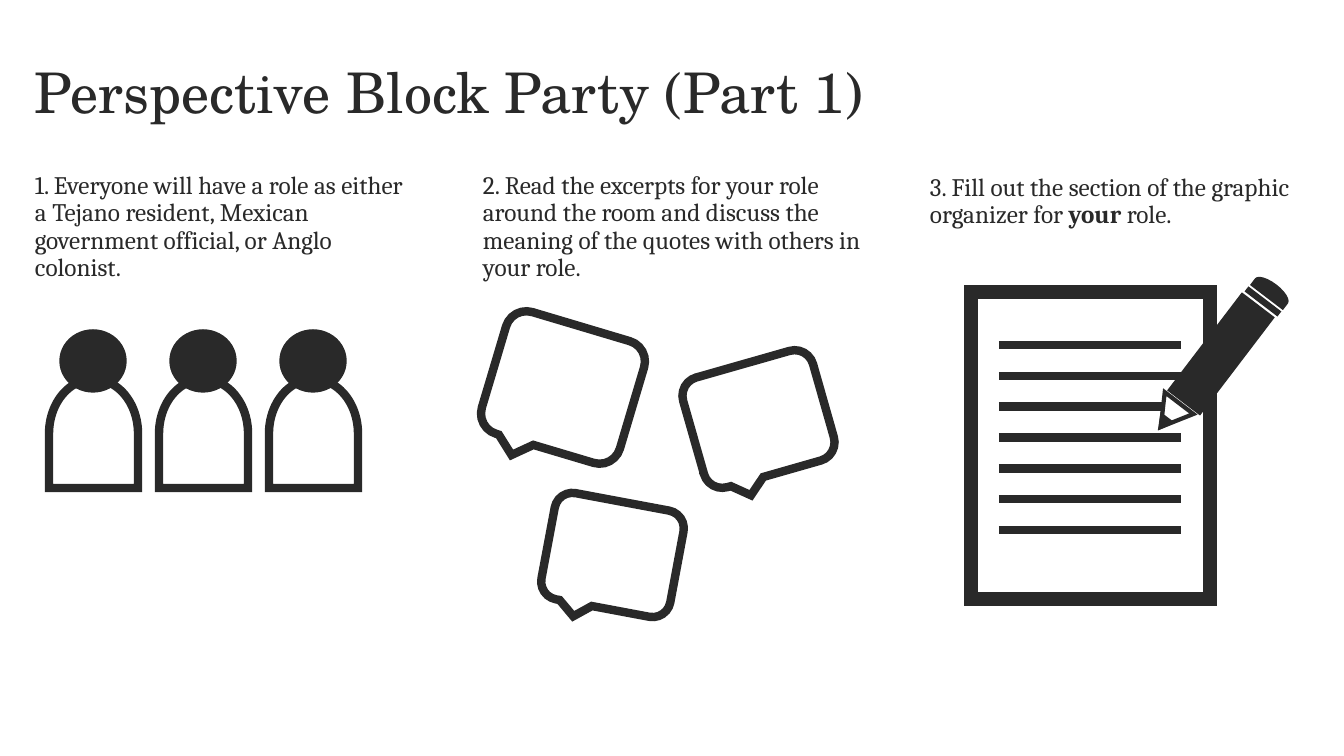
from lxml.etree import SubElement
from pptx import Presentation
from pptx.dml.color import RGBColor
from pptx.enum.shapes import MSO_CONNECTOR, MSO_SHAPE
from pptx.enum.text import MSO_ANCHOR
from pptx.oxml.ns import qn
from pptx.util import Pt

PX = 9144000 / 1008
INK, WHITE = "292929", "FFFFFF"


def color(value):
    return RGBColor.from_string(value)


def add_figure(parent, kind, frame, fill, weight, rotation=0):
    figure = parent.add_shape(kind, *[round(n * PX) for n in frame])
    figure.rotation = rotation
    figure.shadow.inherit = False
    figure.fill.solid()
    figure.fill.fore_color.rgb = color(fill)
    figure.line.color.rgb = color(INK)
    figure.line.width = Pt(weight)
    SubElement(figure.line._ln, qn("a:miter"), lim="800000")


deck = Presentation()
deck.slide_width, deck.slide_height = round(1344 * PX), round(756 * PX)
page = deck.slides.add_slide(deck.slide_layouts[6])

# Title and the three instructions
title_format = {"name": "TeX Gyre Schola", "size": Pt(40)}
step_format = {"name": "Cambria", "size": Pt(18)}
texts = [
    ((25, 22, 1159, 146), MSO_ANCHOR.MIDDLE, title_format,
     [("Perspective Block Party (Part 1)", False)]),
    ((25, 168, 398, 146), MSO_ANCHOR.TOP, step_format,
     [("1. Everyone will have a role as either a Tejano resident, "
       "Mexican government official, or Anglo colonist.", False)]),
    ((473, 168, 398, 146), MSO_ANCHOR.TOP, step_format,
     [("2. Read the excerpts for your role around the room and discuss "
       "the meaning of the quotes with others in your role.", False)]),
    ((920, 170, 398, 146), MSO_ANCHOR.TOP, step_format,
     [("3. Fill out the section of the graphic organizer for ", False),
      ("your ", True), ("role.", False)]),
]
for frame, anchor, font_format, spans in texts:
    box = page.shapes.add_textbox(*[round(n * PX) for n in frame])
    box.text_frame.word_wrap = True
    box.text_frame.vertical_anchor = anchor
    para = box.text_frame.paragraphs[0]
    para.line_spacing = 0.9
    for text, bold in spans:
        span = para.add_run()
        span.text = text
        span.font.color.rgb = color(INK)
        for name, value in {**font_format, "bold": bold}.items():
            setattr(span.font, name, value)

# Speech bubbles
for frame, rotation in [((491, 324, 144, 127), 16.6),
                        ((691, 362, 135, 114), 344.1),
                        ((547, 501, 131, 108), 10.6)]:
    add_figure(page.shapes, MSO_SHAPE.ROUNDED_RECTANGULAR_CALLOUT,
               frame, WHITE, 6, rotation)

# Three people: body, then head
for person in range(3):
    shift = person * 110
    add_figure(page.shapes, MSO_SHAPE.FLOWCHART_DELAY,
               (39 + shift, 389, 109, 89), WHITE, 6, 270)
    add_figure(page.shapes, MSO_SHAPE.OVAL,
               (60 + shift, 330, 66, 62), INK, 1)

# Sheet of paper with seven evenly spaced lines
organizer = page.shapes.add_group_shape().shapes
add_figure(organizer, MSO_SHAPE.RECTANGLE, (971, 292, 239, 307), WHITE, 10)
for row in range(7):
    y = round((345 + row * 185 / 6) * PX)
    rule = organizer.add_connector(
        MSO_CONNECTOR.STRAIGHT, round(999 * PX), y, round(1181 * PX), y)
    rule.line.color.rgb = color(INK)
    rule.line.width = Pt(6)
    SubElement(rule._element.spPr, qn("a:effectLst"))

# Pencil: shaft, tip, lead, band, eraser
for kind, frame, fill, weight, rotation in [
    (MSO_SHAPE.RECTANGLE, (1201, 293, 40, 122), INK, 1, 37.3),
    (MSO_SHAPE.ISOSCELES_TRIANGLE, (1152, 400, 36, 30), WHITE, 3, 217.3),
    (MSO_SHAPE.ISOSCELES_TRIANGLE, (1158, 418, 11, 10), INK, 3, 217.3),
    (MSO_SHAPE.RECTANGLE, (1243, 299, 40, 5), INK, 1, 37.3),
    (MSO_SHAPE.FLOWCHART_DELAY, (1264, 271, 15, 40), INK, 1, 307.3),
]:
    add_figure(organizer, kind, frame, fill, weight, rotation)

deck.save("out.pptx")
